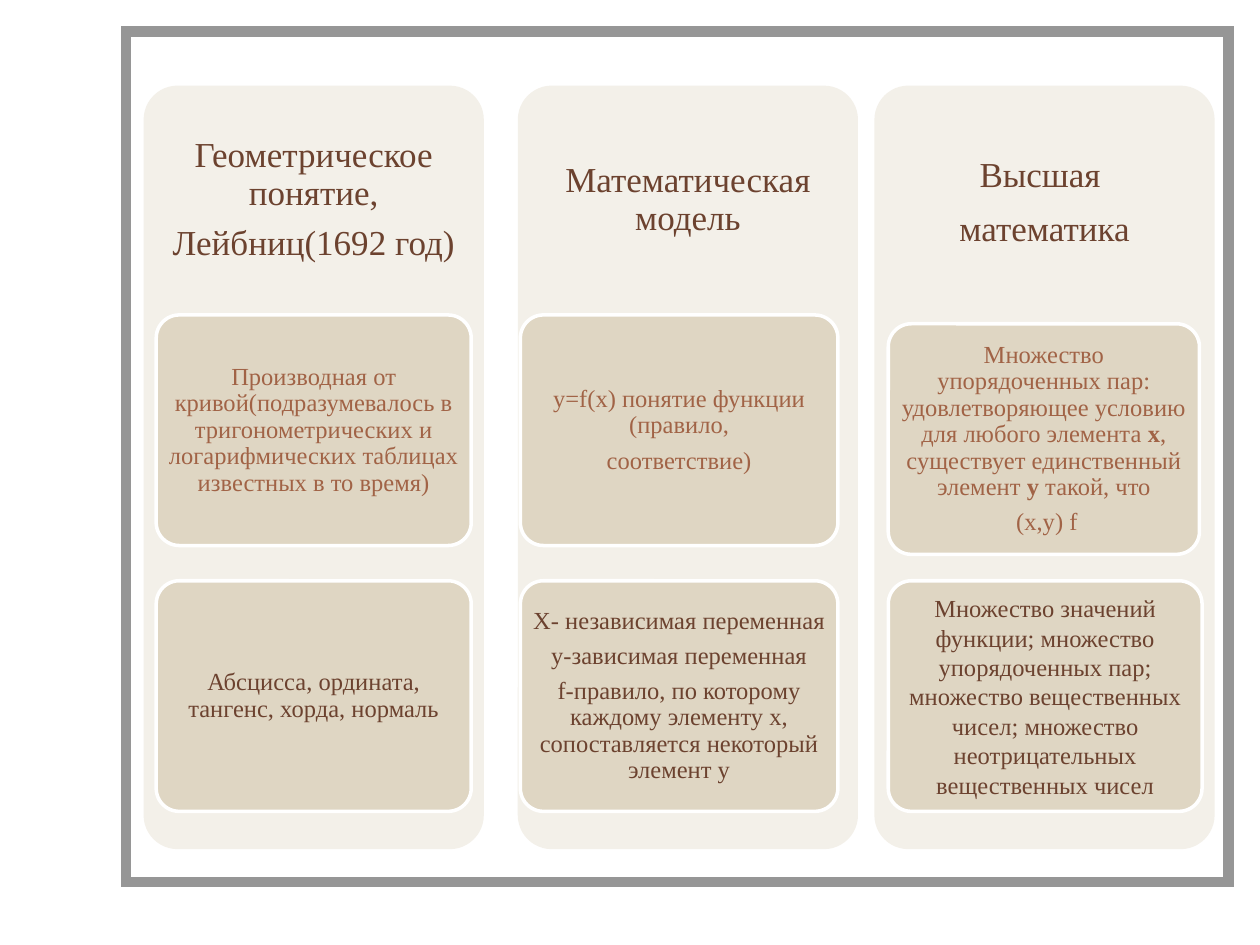
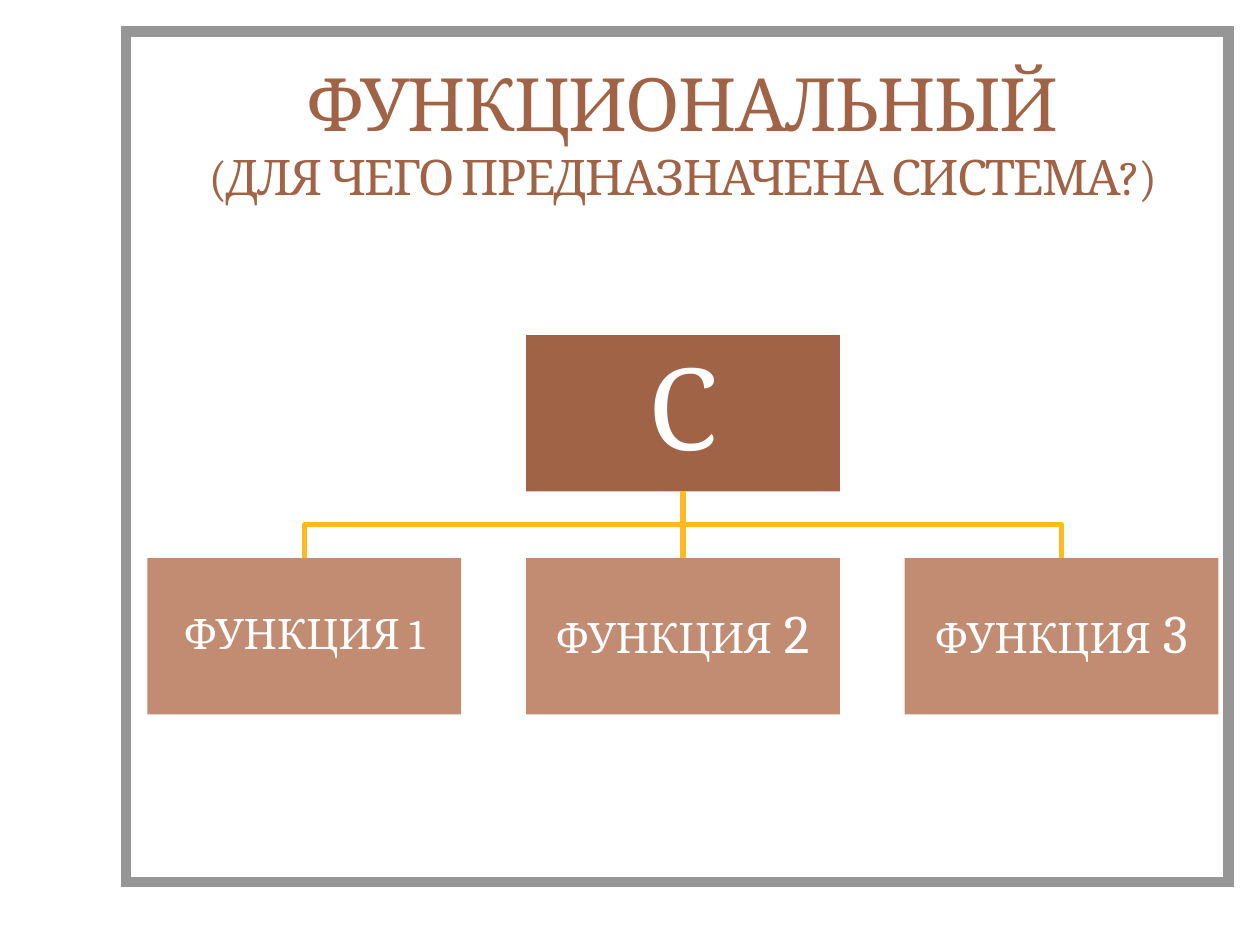
from lxml.etree import SubElement
from pptx import Presentation
from pptx.dml.color import RGBColor
from pptx.enum.shapes import MSO_CONNECTOR, MSO_SHAPE as SHAPE
from pptx.enum.text import MSO_ANCHOR, PP_ALIGN
from pptx.oxml.ns import qn
from pptx.util import Inches, Pt

WHITE = RGBColor(0xFF, 0xFF, 0xFF)
GREY = RGBColor(0x96, 0x96, 0x96)
BROWN = RGBColor(0x6C, 0x42, 0x2F)
RUST = RGBColor(0xA1, 0x63, 0x46)
CLAY = RGBColor(0xC2, 0x8C, 0x73)
GOLD = RGBColor(0xFE, 0xB9, 0x23)
CREAM = RGBColor(0xF3, 0xF0, 0xE9)
SAND = RGBColor(0xDF, 0xD6, 0xC3)

SERIF, TITLE_FONT = "Times New Roman", "Cambria"
BOLD = {"bold": True}

HEADING = {"name": SERIF, "size": 20, "color": BROWN}
DEFINITION = {"name": SERIF, "size": 14, "color": RUST}
TERMS = {"name": SERIF, "size": 14, "color": BROWN}

COLUMN_TOP, COLUMN_W, COLUMN_H, HEADING_H = 0.68, 2.7, 6.06, 1.82
CARD_H, TERMS_TOP = 1.83, 4.61
BOX_W, BOX_H = 2.49, 1.24

# Each card: left, top, width, font, line spacing, paragraphs
COLUMNS = [
    {"left": 1.14, "spacing": 0.9,
     "heading": ["Геометрическое понятие,", "Лейбниц(1692 год)"],
     "cards": [
         (1.24, 2.5, 2.5, DEFINITION, 0.9,
          ["Производная от кривой(подразумевалось в тригонометрических и "
           "логарифмических таблицах известных в то время)"]),
         (1.24, TERMS_TOP, 2.5, TERMS, 0.9,
          ["Абсцисса, ордината, тангенс, хорда, нормаль"])]},
    {"left": 4.11, "spacing": 0.9,
     "heading": ["Математическая модель"],
     "cards": [
         (4.13, 2.5, 2.52, DEFINITION, 0.9,
          ["y=f(х) понятие функции (правило,", "соответствие)"]),
         (4.13, TERMS_TOP, 2.52, TERMS, 0.9,
          ["Х- независимая переменная", "у-зависимая переменная",
           "f-правило, по которому каждому элементу х, сопоставляется "
           "некоторый элемент у"])]},
    {"left": 6.94, "spacing": 1.0,
     "heading": ["Высшая ", "математика"],
     "cards": [
         (7.05, 2.57, 2.47, DEFINITION, 0.9,
          [[("Множество упорядоченных пар: удовлетворяющее условию для "
             "любого элемента ", {}), ("х", BOLD),
            (", существует единственный элемент ", {}), ("у", BOLD),
            (" такой, что", {})],
           " (х,у) f"]),
         (7.05, TERMS_TOP, 2.49, TERMS, 1.0,
          ["Множество значений функции; множество упорядоченных пар; "
           "множество вещественных чисел; множество неотрицательных "
           "вещественных чисел"])]},
]


class Deck:
    def __init__(self):
        self.prs = Presentation()
        self.prs.slide_width, self.prs.slide_height = Inches(10), Inches(7.5)
        self.s = None

    def slide(self):
        """Start a slide with the shared grey frame."""
        self.s = self.prs.slides.add_slide(self.prs.slide_layouts[6])
        frame = self.shape(SHAPE.RECTANGLE, 1, 0.25, 8.75, 6.75, WHITE, GREY, 6)
        SubElement(frame.line._get_or_add_ln(), qn("a:miter"), lim="800000")

    def shape(self, kind, x, y, w, h, fill, line=None, weight=2):
        sp = self.s.shapes.add_shape(kind, *map(Inches, (x, y, w, h)))
        sp.shadow.inherit = False
        sp.fill.solid()
        sp.fill.fore_color.rgb = fill
        if line is None:
            sp.line.fill.background()
        else:
            self.stroke(sp.line, line, weight)
        if kind == SHAPE.ROUNDED_RECTANGLE:
            sp.adjustments[0] = 0.1
        return sp

    def textbox(self, x, y, w, h):
        return self.s.shapes.add_textbox(*map(Inches, (x, y, w, h)))

    def stroke(self, line, color, weight):
        line.color.rgb = color
        line.width = Pt(weight)

    def format(self, r, values):
        for key, value in values.items():
            if key == "color":
                r.font.color.rgb = value
            elif key == "tracking":
                r.font._element.set("spc", str(value * 100))
            else:
                setattr(r.font, key, Pt(value) if key == "size" else value)

    def text(self, sp, paragraphs, font, inset=(0.1, 0.05), spacing=0.9, after=0.35):
        """Fill a shape; a paragraph is a string or a list of (text, format) runs.

        The space after a paragraph is a share of the font size.
        """
        tf = sp.text_frame
        tf.word_wrap = True
        tf.vertical_anchor = MSO_ANCHOR.MIDDLE
        tf.margin_left = tf.margin_right = Inches(inset[0])
        tf.margin_top = tf.margin_bottom = Inches(inset[1])
        for i, runs in enumerate(paragraphs):
            p = tf.paragraphs[0] if i == 0 else tf.add_paragraph()
            p.alignment = PP_ALIGN.CENTER
            p.line_spacing = spacing
            p.space_after = Pt(round(font["size"] * after))
            for words, extra in [(runs, {})] if isinstance(runs, str) else runs:
                if words == "\n":
                    p.add_line_break()
                    continue
                r = p.add_run()
                r.text = words
                self.format(r, {**font, **extra})

    def column(self, left, heading, spacing, cards):
        self.shape(SHAPE.ROUNDED_RECTANGLE, left, COLUMN_TOP, COLUMN_W, COLUMN_H, CREAM)
        sp = self.textbox(left, COLUMN_TOP, COLUMN_W, HEADING_H)
        self.text(sp, heading, HEADING, (0.08, 0.08), spacing)
        for x, y, w, font, card_spacing, paragraphs in cards:
            sp = self.shape(SHAPE.ROUNDED_RECTANGLE, x, y, w, CARD_H, SAND, WHITE)
            self.text(sp, paragraphs, font, (0.04, 0.03), card_spacing)

    def title(self, heading, question):
        font = {"name": TITLE_FONT, "size": 42, "color": RUST, "tracking": -1}
        runs = [(heading, {}), ("\n", {}), (question, {"size": 28})]
        self.text(self.textbox(1.17, 0.42, 8.5, 1.25), [runs], font, spacing=1.0, after=0)

    def box(self, x, y, fill, runs, size, inset):
        sp = self.shape(SHAPE.RECTANGLE, x, y, BOX_W, BOX_H, fill)
        font = {"name": TITLE_FONT, "size": size, "color": WHITE}
        self.text(sp, [runs], font, (inset, inset))
        return sp

    def trunk(self, parent, child):
        """Join two boxes that stand one above the other."""
        c = self.s.shapes.add_connector(MSO_CONNECTOR.STRAIGHT, 0, 0, 0, 0)
        c.begin_connect(parent, 2)
        c.end_connect(child, 0)
        self.stroke(c.line, GOLD, 3)
        SubElement(c._element.spPr, qn("a:effectLst"))

    def branch(self, parent, child):
        """Draw an elbow from the parent's bottom to the child's top."""
        x1, y1 = parent.left + parent.width // 2, parent.top + parent.height
        x2, y2 = child.left + child.width // 2, child.top
        middle = (y1 + y2) // 2
        builder = self.s.shapes.build_freeform(x1, y1)
        builder.add_line_segments([(x1, middle), (x2, middle), (x2, y2)], close=False)
        sp = builder.convert_to_shape()
        sp.shadow.inherit = False
        sp.fill.background()
        self.stroke(sp.line, GOLD, 3)


def main():
    deck = Deck()

    deck.slide()
    for column in COLUMNS:
        deck.column(**column)

    deck.slide()
    deck.title("ФУНКЦИОНАЛЬНЫЙ", "(ДЛЯ ЧЕГО ПРЕДНАЗНАЧЕНА СИСТЕМА?)")
    left, step = 1.17, 3.005
    system = deck.box(left + step, 2.66, RUST, "С", 65, 0.05)
    labels = ["ФУНКЦИЯ 1"] + [[("ФУНКЦИЯ", {}), (f" {n}", {"size": 31})] for n in (2, 3)]
    first, second, third = [
        deck.box(left + i * step, 4.43, CLAY, label, 24, 0.02)
        for i, label in enumerate(labels)]
    deck.trunk(system, second)
    for function in (first, third):
        deck.branch(system, function)

    deck.prs.save("out.pptx")


if __name__ == "__main__":
    main()
